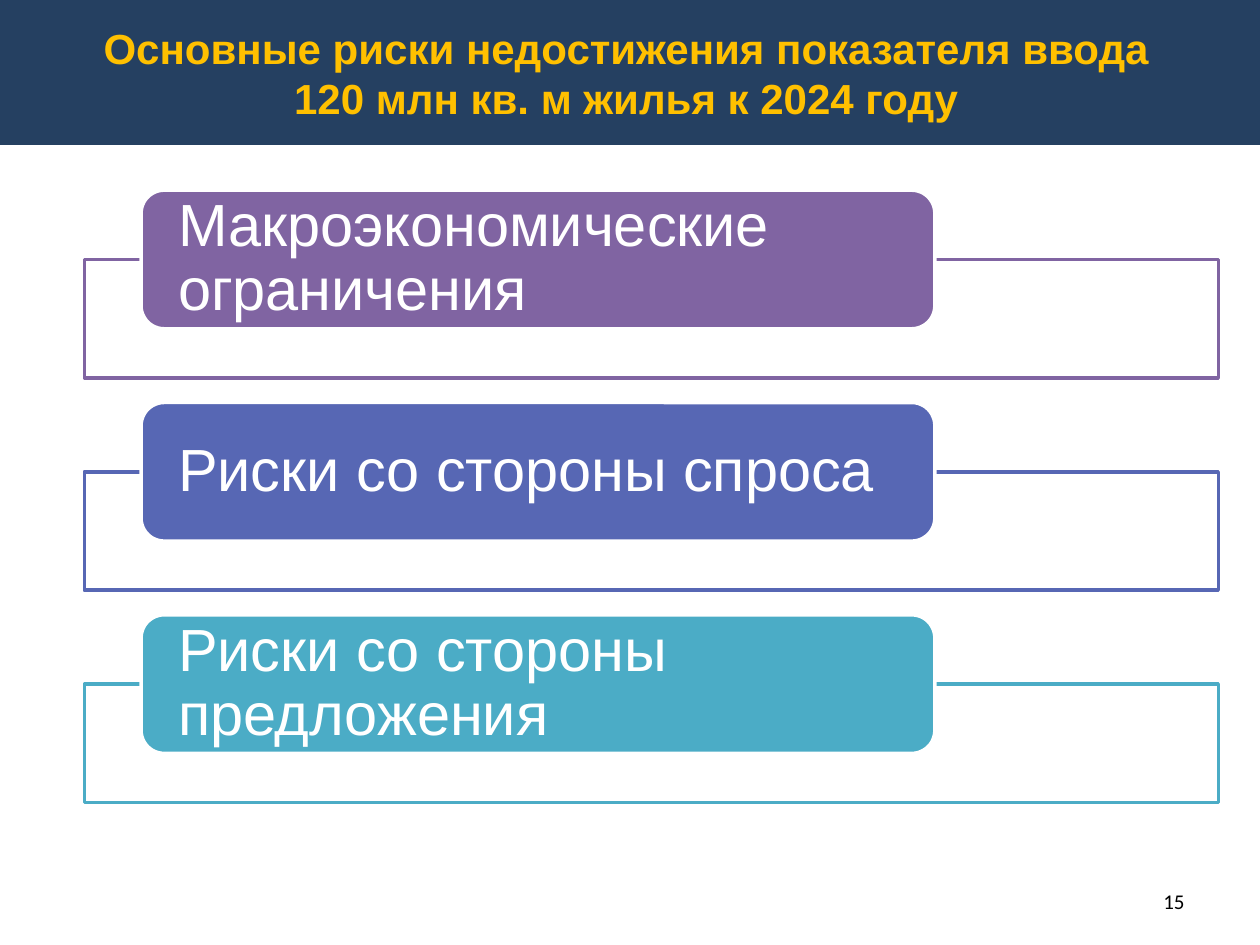
from pptx import Presentation
from pptx.dml.color import RGBColor
from pptx.enum import shapes, text
from pptx.util import Inches, Pt

NAVY = RGBColor(0x25, 0x40, 0x61)
GOLD = RGBColor(0xFF, 0xC0, 0x00)
WHITE = RGBColor(0xFF, 0xFF, 0xFF)
BLACK = RGBColor(0x00, 0x00, 0x00)
PURPLE = RGBColor(0x80, 0x64, 0xA2)
BLUE = RGBColor(0x57, 0x67, 0xB4)
TEAL = RGBColor(0x4B, 0xAC, 0xC6)

TITLE_LINES = ["Основные риски недостижения показателя ввода",
               "120 млн кв. м жилья к 2024 году"]
PAGE_NUMBER = "15"
RISKS = [
    ("Макроэкономические ограничения", PURPLE),
    ("Риски со стороны спроса", BLUE),
    ("Риски со стороны предложения", TEAL),
]

FIRST_TOP, PITCH = 1.51, 1.685
LABEL_HEIGHT = 1.1


def add_block(slide, preset, box, fill, line=None):
    block = slide.shapes.add_shape(preset, *map(Inches, box))
    block.shadow.inherit = False
    block.fill.solid()
    block.fill.fore_color.rgb = fill
    if line is None:
        block.line.fill.background()
    else:
        block.line.color.rgb = line
        block.line.width = Pt(2)
    return block


def write(holder, lines, font_name, size, color, align, bold=False):
    frame = holder.text_frame
    frame.word_wrap = True
    frame.vertical_anchor = text.MSO_ANCHOR.MIDDLE
    paragraph = frame.paragraphs[0]
    paragraph.text = "\v".join(lines)
    paragraph.alignment = align
    font = paragraph.font
    font.name, font.size, font.bold = font_name, Pt(size), bold
    font.color.rgb = color
    return frame


def add_risk(slide, top, name, color):
    add_block(slide, shapes.MSO_SHAPE.RECTANGLE,
              (0.67, top + LABEL_HEIGHT / 2, 9, 0.94), WHITE, color)
    label = add_block(slide, shapes.MSO_SHAPE.ROUNDED_RECTANGLE,
                      (1.12, top, 6.3, LABEL_HEIGHT), color, WHITE)
    frame = write(label, [name], "Arial", 34, WHITE, text.PP_ALIGN.LEFT)
    frame.margin_left = frame.margin_right = Inches(0.24)
    frame.margin_top = frame.margin_bottom = 0
    frame.paragraphs[0].line_spacing = 0.9


def main():
    deck = Presentation()
    deck.slide_width, deck.slide_height = Inches(10), Inches(7.5)
    slide = deck.slides.add_slide(deck.slide_layouts[6])

    add_block(slide, shapes.MSO_SHAPE.RECTANGLE, (0, 0, 10, 1.15), NAVY)
    title = slide.shapes.add_textbox(*map(Inches, (0.2, 0, 9.54, 1.15)))
    write(title, TITLE_LINES, "Arial", 24, GOLD, text.PP_ALIGN.CENTER, bold=True)
    number = slide.shapes.add_textbox(*map(Inches, (7.17, 6.95, 2.33, 0.4)))
    write(number, [PAGE_NUMBER], "Calibri", 12, BLACK, text.PP_ALIGN.RIGHT)

    for row, (name, color) in enumerate(RISKS):
        add_risk(slide, FIRST_TOP + row * PITCH, name, color)

    deck.save("out.pptx")


if __name__ == "__main__":
    main()
